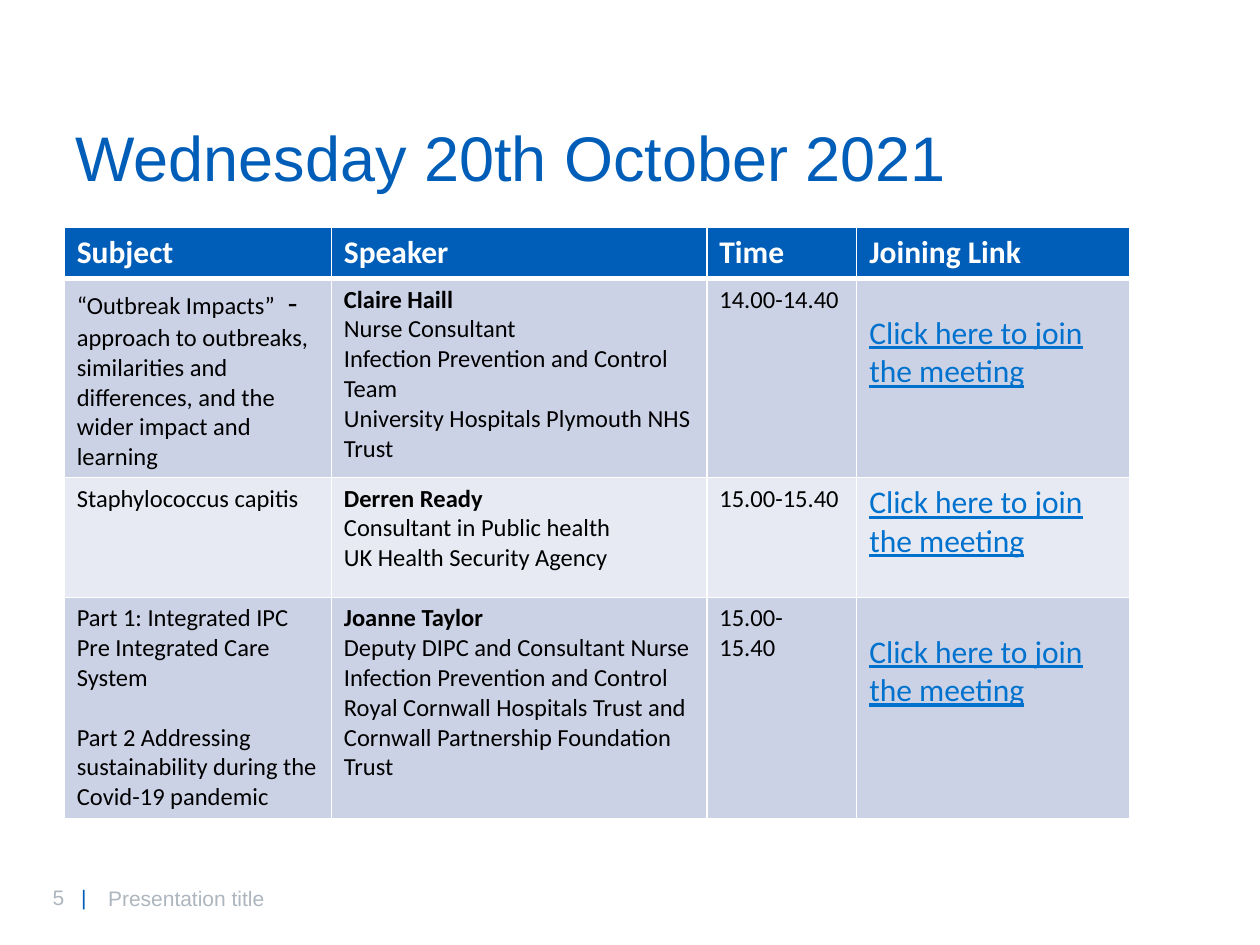
from dataclasses import dataclass

from lxml import etree
from pptx import Presentation
from pptx import util as u
from pptx.dml.color import RGBColor
from pptx.enum import text as t
from pptx.oxml import ns

COLORS = {
    "blue": "005EB8",
    "link": "0072CE",
    "grey": "ADB6BE",
    "black": "000000",
    "white": "FFFFFF",
    "band_dark": "CCD2E6",
    "band_light": "E7EAF3",
}
WIDTH, HEIGHT = u.Inches(10), u.Inches(7.5)
COLUMN_SHARES = (21.2, 29.8, 11.9, 21.7)
ROW_SHARES = (5.47, 21.07, 12.67, 23.4)
TABLE_LEFT, TABLE_TOP = 5.1, 24
LINE_GAP = u.Pt(17)
CELL_MARGIN = u.Inches(0.05)


@dataclass(frozen=True)
class Span:
    text: str
    size: float = 14
    color: str = "black"
    bold: bool = False
    underline: bool = False
    font: str = "Calibri"


@dataclass(frozen=True)
class Label:
    left: float
    top: float
    width: float
    height: float
    anchor: t.MSO_ANCHOR
    spans: tuple[Span, ...]
    line_spacing: float = 1.0
    tab: float = 0


@dataclass(frozen=True)
class Session:
    subject: tuple[tuple[Span, ...], ...]
    speaker: str
    details: tuple[str, ...]
    time: str
    fill: str
    link_lowered: bool = False


LABELS = (
    Label(5, 12.4, 71.8, 8.93, t.MSO_ANCHOR.BOTTOM,
          (Span("Wednesday 20th October 2021", 36, "blue", font="Arial"),),
          line_spacing=0.9),
    Label(3.2, 92.93, 7.1, 4, t.MSO_ANCHOR.TOP,
          (Span("5\t", 12, "grey", font="Arial"),
           Span("|", 12, "blue", font="Arial")), tab=2.25),
    Label(7.6, 92.4, 62.6, 5.33, t.MSO_ANCHOR.MIDDLE,
          (Span("Presentation title", 12, "grey", font="Arial"),)),
)
HEADINGS = ("Subject", "Speaker", "Time", "Joining Link")
LINK = Span("Click here to join the meeting", 18, "link", underline=True)
SESSIONS = (
    Session(
        ((Span("“Outbreak Impacts” "), Span(" - ", 18),
          Span("approach to outbreaks, similarities and differences, "
               "and the wider impact and learning")),),
        "Claire Haill",
        ("Nurse Consultant", "Infection Prevention and Control Team",
         "University Hospitals Plymouth NHS Trust"),
        "14.00-14.40", "band_dark", link_lowered=True),
    Session(
        ((Span("Staphylococcus capitis"),),),
        "Derren Ready",
        ("Consultant in Public health", "UK Health Security Agency"),
        "15.00-15.40", "band_light"),
    Session(
        ((Span("Part 1: Integrated IPC Pre Integrated Care System"),),
         (Span("Part 2 Addressing sustainability during the Covid-19 pandemic"),)),
        "Joanne Taylor",
        ("Deputy DIPC and Consultant Nurse Infection Prevention and Control",
         "Royal Cornwall Hospitals Trust and Cornwall Partnership Foundation Trust"),
        "15.00- 15.40", "band_dark", link_lowered=True),
)


def across(share: float) -> int:
    return round(WIDTH * share / 100)


def down(share: float) -> int:
    return round(HEIGHT * share / 100)


def rgb(name: str) -> RGBColor:
    return RGBColor.from_string(COLORS[name])


def write_spans(para, spans: tuple[Span, ...]) -> None:
    for span in spans:
        run = para.add_run()
        run.text = span.text
        run.font.name = span.font
        run.font.size = u.Pt(span.size)
        run.font.bold = span.bold
        run.font.underline = span.underline
        run.font.color.rgb = rgb(span.color)


def draw_label(page, label: Label) -> None:
    box = page.shapes.add_textbox(across(label.left), down(label.top),
                                  across(label.width), down(label.height))
    frame = box.text_frame
    frame.word_wrap = True
    frame.vertical_anchor = label.anchor
    para = frame.paragraphs[0]
    para.line_spacing = label.line_spacing
    if label.tab:
        tabs = etree.SubElement(para._p.get_or_add_pPr(), ns.qn("a:tabLst"))
        etree.SubElement(tabs, ns.qn("a:tab"), pos=str(across(label.tab)), algn="l")
    write_spans(para, label.spans)


def draw_borders(cell, top: float, bottom: float) -> None:
    properties = cell._tc.get_or_add_tcPr()
    for side, points in (("L", 1), ("R", 1), ("T", top), ("B", bottom)):
        line = etree.SubElement(properties, ns.qn(f"a:ln{side}"), w=str(u.Pt(points)))
        fill = etree.SubElement(line, ns.qn("a:solidFill"))
        etree.SubElement(fill, ns.qn("a:srgbClr"), val=COLORS["white"])


def fill_cell(cell, paragraphs: tuple[tuple[Span, ...], ...], fill: str,
              top: float = 1, bottom: float = 1, gap: int = 0) -> None:
    draw_borders(cell, top, bottom)
    cell.fill.solid()
    cell.fill.fore_color.rgb = rgb(fill)
    frame = cell.text_frame
    for index, spans in enumerate(paragraphs):
        para = frame.add_paragraph() if index else frame.paragraphs[0]
        if index and gap:
            para.space_before = gap
        write_spans(para, spans)


def draw_schedule(page) -> None:
    table = page.shapes.add_table(
        len(ROW_SHARES), len(COLUMN_SHARES), across(TABLE_LEFT), down(TABLE_TOP),
        across(sum(COLUMN_SHARES)), down(sum(ROW_SHARES))).table
    for column, share in zip(table.columns, COLUMN_SHARES):
        column.width = across(share)
    for row, share in zip(table.rows, ROW_SHARES):
        row.height = down(share)
    for index, heading in enumerate(HEADINGS):
        fill_cell(table.cell(0, index), ((Span(heading, 18, "white", bold=True),),),
                  "blue", bottom=3)
    for index, session in enumerate(SESSIONS, start=1):
        top = 3 if index == 1 else 1
        speaker = ((Span(session.speaker, bold=True),),
                   *((Span(detail),) for detail in session.details))
        contents = (session.subject, speaker, ((Span(session.time),),), ((LINK,),))
        for column, paragraphs in enumerate(contents):
            fill_cell(table.cell(index, column), paragraphs, session.fill, top=top,
                      gap=LINE_GAP if column == 0 else 0)
        if session.link_lowered:
            table.cell(index, 3).margin_top = CELL_MARGIN + LINE_GAP


def main() -> None:
    deck = Presentation()
    deck.slide_width, deck.slide_height = WIDTH, HEIGHT
    page = deck.slides.add_slide(deck.slide_layouts[6])
    for label in LABELS:
        draw_label(page, label)
    draw_schedule(page)
    deck.save("out.pptx")


if __name__ == "__main__":
    main()
